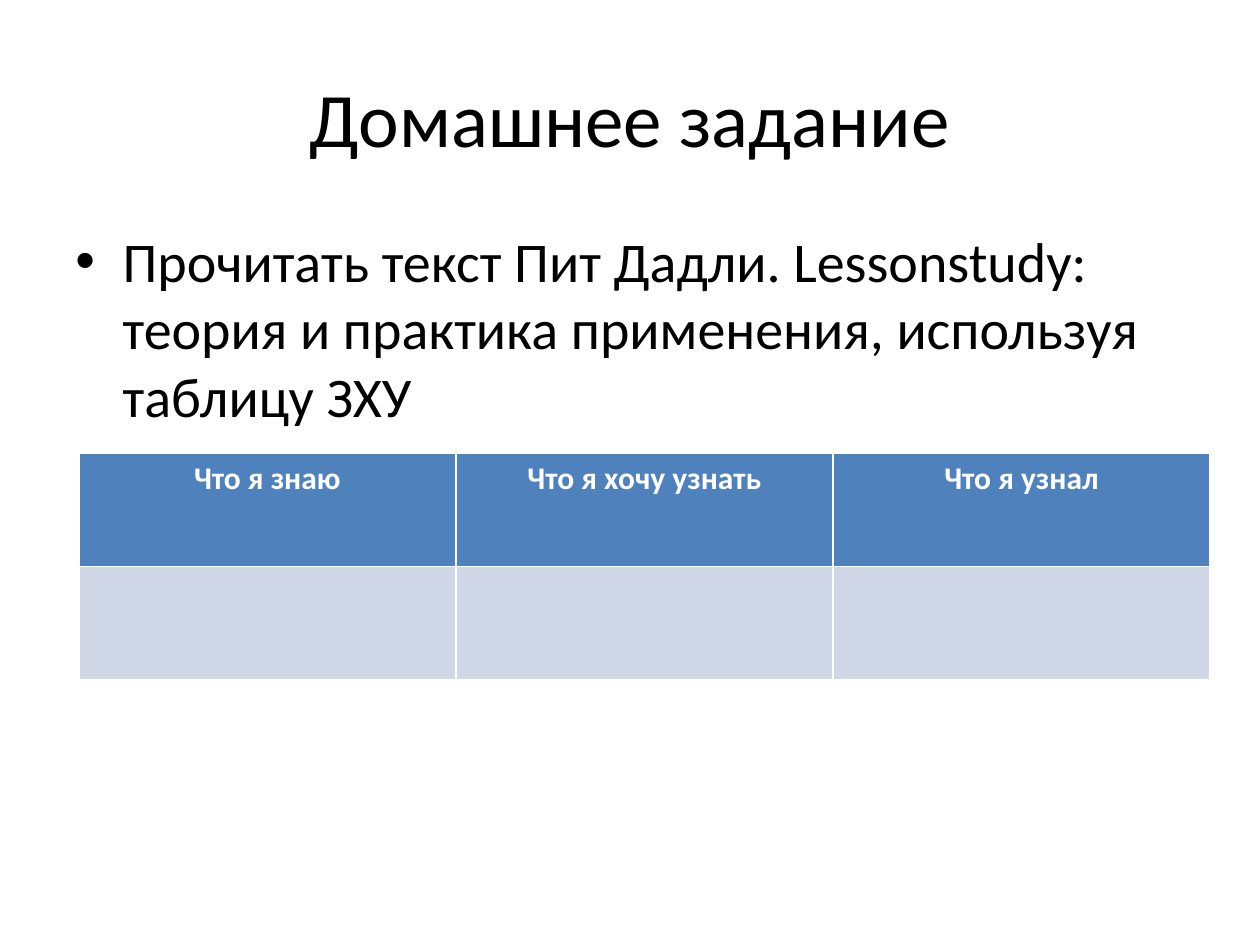
from dataclasses import dataclass

from lxml import etree
from pptx import Presentation
from pptx import util as u
from pptx.dml.color import RGBColor
from pptx.enum import text
from pptx.oxml import ns

FONT = "Calibri"
BLACK = RGBColor(0x00, 0x00, 0x00)
WHITE = RGBColor(0xFF, 0xFF, 0xFF)
HEADER_BLUE = RGBColor(0x4F, 0x81, 0xBD)
BODY_BLUE = RGBColor(0xD0, 0xD8, 0xE8)
HEADINGS = ("Что я знаю", "Что я хочу узнать", "Что я узнал")


@dataclass(frozen=True)
class TextBlock:
    """Wording, place and style of one text box, in points."""

    wording: str
    left: float
    top: float
    width: float
    height: float
    size: float
    alignment: text.PP_ALIGN
    anchor: text.MSO_ANCHOR
    indent: float = 0
    space_before: float = 0


TITLE = TextBlock("Домашнее задание", 36, 21.6, 648, 90, 44,
                  text.PP_ALIGN.CENTER, text.MSO_ANCHOR.MIDDLE)
TASK = TextBlock(
    "Прочитать текст Пит Дадли. Lessonstudy: теория и практика применения, "
    "используя таблицу ЗХУ",
    36, 126, 648, 356.4, 32, text.PP_ALIGN.LEFT, text.MSO_ANCHOR.TOP,
    indent=27, space_before=6.4)


def style_runs(paragraph, size: float, color: RGBColor, bold: bool = False) -> None:
    """Format every run of a paragraph."""
    for run in paragraph.runs:
        run.font.name = FONT
        run.font.size = u.Pt(size)
        run.font.bold = bold
        run.font.color.rgb = color


def add_bullet(paragraph, indent: float) -> None:
    """Give a paragraph a round bullet with a hanging indent."""
    properties = paragraph._p.get_or_add_pPr()
    properties.set("marL", str(u.Pt(indent)))
    properties.set("indent", str(-u.Pt(indent)))
    etree.SubElement(properties, ns.qn("a:buFont")).set("typeface", "Arial")
    etree.SubElement(properties, ns.qn("a:buChar")).set("char", "•")


def add_text_block(slide, block: TextBlock) -> None:
    """Draw one text box."""
    shape = slide.shapes.add_textbox(
        u.Pt(block.left), u.Pt(block.top), u.Pt(block.width), u.Pt(block.height))
    frame = shape.text_frame
    frame.word_wrap = True
    frame.vertical_anchor = block.anchor
    frame.text = block.wording
    paragraph = frame.paragraphs[0]
    paragraph.alignment = block.alignment
    style_runs(paragraph, block.size, BLACK)
    if block.space_before:
        paragraph.space_before = u.Pt(block.space_before)
    if block.indent:
        add_bullet(paragraph, block.indent)


def add_knowledge_table(slide) -> None:
    """Draw the three-column table with a heading row and an empty row."""
    table = slide.shapes.add_table(
        2, len(HEADINGS), u.Pt(45), u.Pt(258.8), u.Pt(646.5), u.Pt(129.6)).table
    for column, heading in enumerate(HEADINGS):
        header, answer = table.cell(0, column), table.cell(1, column)
        for cell, color in ((header, HEADER_BLUE), (answer, BODY_BLUE)):
            cell.fill.solid()
            cell.fill.fore_color.rgb = color
        header.text_frame.text = heading
        paragraph = header.text_frame.paragraphs[0]
        paragraph.alignment = text.PP_ALIGN.CENTER
        style_runs(paragraph, 18, WHITE, bold=True)


def main() -> None:
    """Build and save the homework slide."""
    presentation = Presentation()
    presentation.slide_width = u.Pt(720)
    presentation.slide_height = u.Pt(540)
    slide = presentation.slides.add_slide(presentation.slide_layouts[6])
    for block in (TITLE, TASK):
        add_text_block(slide, block)
    add_knowledge_table(slide)
    presentation.save("out.pptx")


if __name__ == "__main__":
    main()
